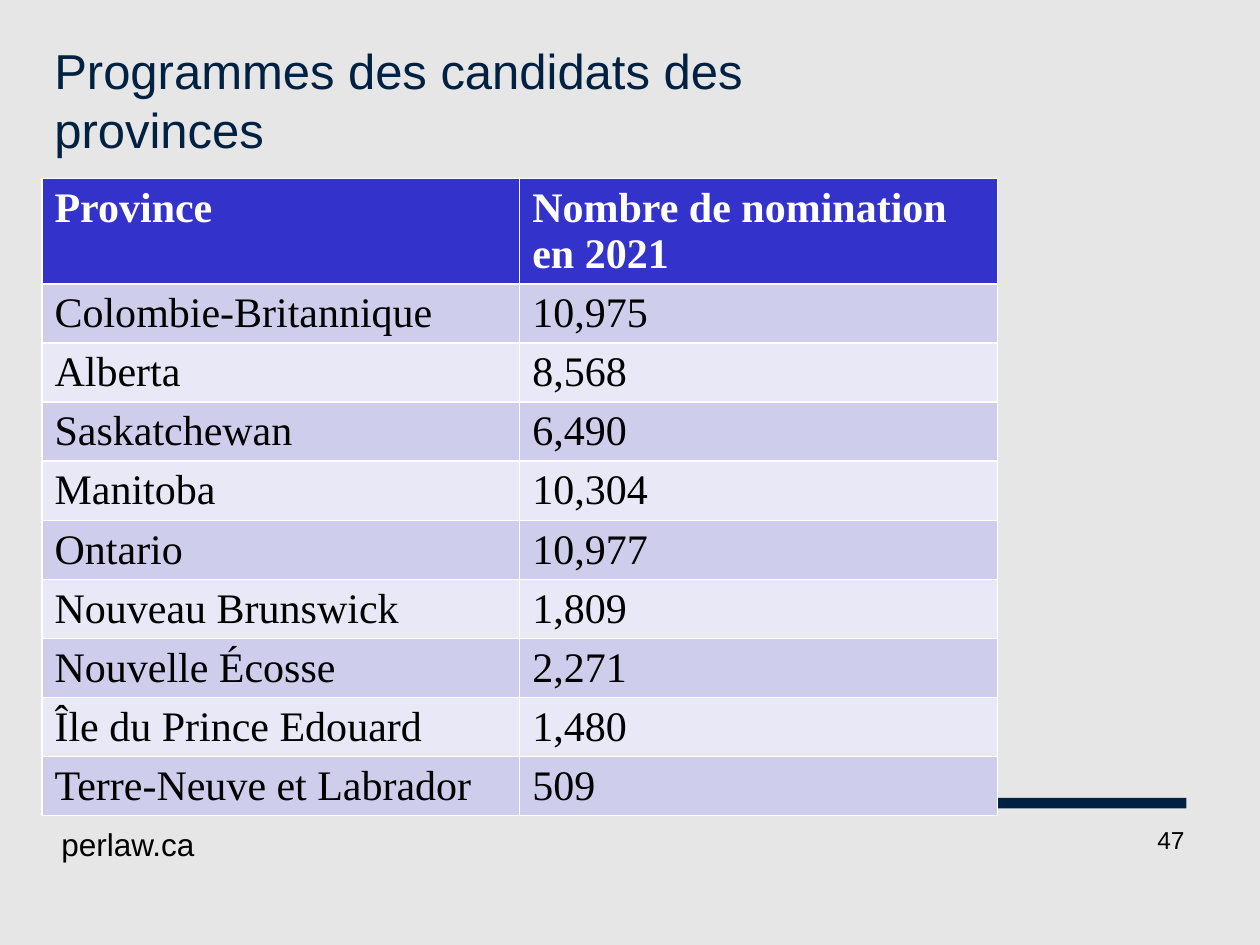
from pptx import Presentation
from pptx.dml.color import RGBColor
from pptx.enum.shapes import MSO_SHAPE
from pptx.enum.text import MSO_ANCHOR, PP_ALIGN
from pptx.util import Pt

RECT = MSO_SHAPE.RECTANGLE
TOP, MID = MSO_ANCHOR.TOP, MSO_ANCHOR.MIDDLE
LEFT, RIGHT = PP_ALIGN.LEFT, PP_ALIGN.RIGHT

PAPER = RGBColor(0xE6, 0xE6, 0xE6)
NAVY = RGBColor(0x00, 0x21, 0x42)
BLUE = RGBColor(0x33, 0x33, 0xCC)
BANDS = RGBColor(0xE8, 0xE8, 0xF6), RGBColor(0xCE, 0xCE, 0xEC)
WHITE = RGBColor(0xFF, 0xFF, 0xFF)
BLACK = RGBColor(0x00, 0x00, 0x00)

# Content
ROWS = [
    ("Province", "Nombre de nomination en 2021"),
    ("Colombie-Britannique", "10,975"),
    ("Alberta", "8,568"),
    ("Saskatchewan", "6,490"),
    ("Manitoba", "10,304"),
    ("Ontario", "10,977"),
    ("Nouveau Brunswick", "1,809"),
    ("Nouvelle Écosse", "2,271"),
    ("Île du Prince Edouard", "1,480"),
    ("Terre-Neuve et Labrador", "509"),
]
EDGE, COL_W, ROW_H = 24, 273, 29.5

# Text, box in points, anchor, alignment, left inset, size, colour
TEXTS = [
    ("Programmes des candidats des provinces",
     (EDGE, 12, 510, 90), MID, LEFT, 7.2, 28, NAVY),
    ("perlaw.ca", (EDGE, 468, 228, 37.5), TOP, LEFT, 11.1, 18, BLACK),
    ("47", (516, 468, 168, 37.5), TOP, RIGHT, 7.2, 14, BLACK),
]


def style(para, **form):
    color = form.pop("color")
    for key, value in form.items():
        setattr(para.font, key, value)
    para.font.color.rgb = color


def main():
    deck = Presentation()
    deck.slide_width, deck.slide_height = Pt(720), Pt(540)
    slide = deck.slides.add_slide(deck.slide_layouts[6])
    back = slide.background.fill
    back.solid()
    back.fore_color.rgb = PAPER

    # Footer bar, behind the table
    bar = slide.shapes.add_shape(RECT, Pt(EDGE), Pt(456), Pt(654), Pt(6))
    bar.shadow.inherit = False
    bar.fill.solid()
    bar.fill.fore_color.rgb = NAVY
    bar.line.fill.background()

    # Table of nominations; its style draws the white rules
    table = slide.shapes.add_table(
        len(ROWS), 2, Pt(EDGE), Pt(102),
        Pt(2 * COL_W), Pt(ROW_H * len(ROWS))).table
    for col in table.columns:
        col.width = Pt(COL_W)
    for r, row in enumerate(ROWS):
        head = r == 0
        table.rows[r].height = Pt(ROW_H)
        for c, text in enumerate(row):
            cell = table.cell(r, c)
            cell.text = text
            cell.fill.solid()
            cell.fill.fore_color.rgb = BLUE if head else BANDS[r % 2]
            style(cell.text_frame.paragraphs[0], name="Times New Roman",
                  size=Pt(24), bold=head, color=WHITE if head else BLACK)

    # Title, site and page number
    for text, place, anchor, align, inset, size, color in TEXTS:
        box = slide.shapes.add_textbox(*map(Pt, place))
        frame = box.text_frame
        frame.word_wrap = True
        frame.vertical_anchor = anchor
        frame.margin_left = Pt(inset)
        frame.text = text
        para = frame.paragraphs[0]
        para.alignment = align
        style(para, name="Arial", size=Pt(size), color=color)

    deck.save("out.pptx")


if __name__ == "__main__":
    main()
